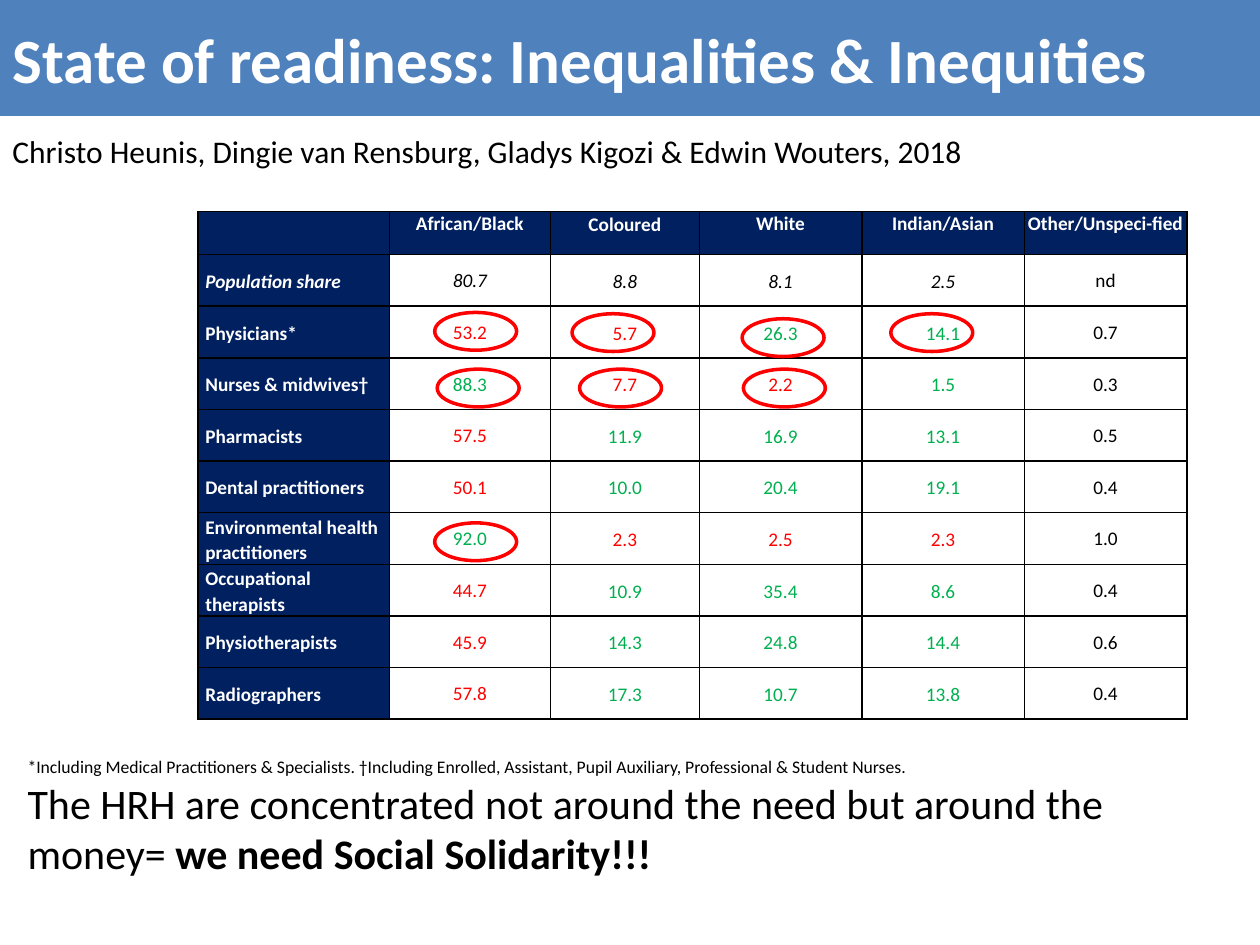
from lxml.etree import SubElement
from pptx import Presentation
from pptx.dml.color import RGBColor
from pptx.enum.shapes import MSO_SHAPE as SHAPE
from pptx.enum.text import MSO_ANCHOR as ANCHOR, PP_ALIGN as ALIGN
from pptx.oxml.ns import qn
from pptx.util import Inches, Pt

WHITE = RGBColor(0xFF, 0xFF, 0xFF)
BLACK = RGBColor(0, 0, 0)
NAVY = RGBColor(0x00, 0x20, 0x60)
BLUE = RGBColor(0x4F, 0x81, 0xBD)
RED = RGBColor(0xFF, 0, 0)
GREEN = RGBColor(0x00, 0xB0, 0x50)

HEADERS = ["", "African/Black", "Coloured", "White", "Indian/Asian", "Other/Unspeci-fied"]
ROWS = [
    ["Population share", "80.7", "8.8", "8.1", "2.5", "nd"],
    ["Physicians*", "53.2", "5.7", "26.3", "14.1", "0.7"],
    ["Nurses & midwives†", "88.3", "7.7", "2.2", "1.5", "0.3"],
    ["Pharmacists", "57.5", "11.9", "16.9", "13.1", "0.5"],
    ["Dental practitioners", "50.1", "10.0", "20.4", "19.1", "0.4"],
    ["Environmental health practitioners", "92.0", "2.3", "2.5", "2.3", "1.0"],
    ["Occupational therapists", "44.7", "10.9", "35.4", "8.6", "0.4"],
    ["Physiotherapists", "45.9", "14.3", "24.8", "14.4", "0.6"],
    ["Radiographers", "57.8", "17.3", "10.7", "13.8", "0.4"],
]
COLUMN_WIDTHS = [1.52, 1.28, 1.18, 1.29, 1.29, 1.29]
HEADER_HEIGHT, ROW_HEIGHT = 0.34, 0.41
ALWAYS_GREEN = {(3, 4)}  # below its population share, yet shown in green


def set_font(p, size, color, bold=False, italic=False):
    f = p.font
    f.name, f.size, f.bold, f.italic = "Calibri", Pt(size), bold, italic
    f.color.rgb = color


def add_borders(cell):
    tcPr = cell._tc.get_or_add_tcPr()
    for side in ("a:lnL", "a:lnR", "a:lnT", "a:lnB"):
        ln = SubElement(tcPr, qn(side), w=str(Pt(1)))
        SubElement(SubElement(ln, qn("a:solidFill")), qn("a:srgbClr"), val=str(BLACK))


prs = Presentation()
prs.slide_width, prs.slide_height = Inches(10), Inches(7.5)
s = prs.slides.add_slide(prs.slide_layouts[5])

# Title bar
title = s.shapes.title
title.left, title.top = 0, 0
title.width, title.height = prs.slide_width, Inches(0.92)
title.fill.solid()
title.fill.fore_color.rgb = BLUE
tf = title.text_frame
tf.text = "State of readiness: Inequalities & Inequities"
tf.vertical_anchor = ANCHOR.MIDDLE
tf.paragraphs[0].alignment = ALIGN.LEFT
set_font(tf.paragraphs[0], 36, WHITE, bold=True)

# Authors
tf = s.shapes.add_textbox(0, Inches(1), Inches(9.88), Inches(0.4)).text_frame
tf.word_wrap = True
tf.text = "Christo Heunis, Dingie van Rensburg, Gladys Kigozi & Edwin Wouters, 2018"
set_font(tf.paragraphs[0], 18, BLACK)

# Table: green at or above the population share, red below it
data = [HEADERS] + ROWS
table = s.shapes.add_table(len(data), len(HEADERS), Inches(1.57), Inches(1.68),
                           Inches(sum(COLUMN_WIDTHS)),
                           Inches(HEADER_HEIGHT + ROW_HEIGHT * len(ROWS))).table
table.first_row = table.horz_banding = False
for column, width in zip(table.columns, COLUMN_WIDTHS):
    column.width = Inches(width)
for r, texts in enumerate(data):
    table.rows[r].height = Inches(ROW_HEIGHT if r else HEADER_HEIGHT)
    for c, text in enumerate(texts):
        cell = table.cell(r, c)
        add_borders(cell)
        heading = r == 0 or c == 0
        if heading:
            cell.fill.solid()
            cell.fill.fore_color.rgb = NAVY
            color = WHITE
        else:
            cell.fill.background()
            if r == 1 or c == 5:
                color = BLACK
            elif (r, c) in ALWAYS_GREEN or float(text) >= float(ROWS[0][c]):
                color = GREEN
            else:
                color = RED
        padded = c == 2 or (r > 0 and c in (0, 3, 4))
        cell.margin_left = cell.margin_right = Inches(0.06 if padded else 0)
        cell.margin_top, cell.margin_bottom = Inches(0.01 if padded else 0), 0
        cell.vertical_anchor = ANCHOR.MIDDLE if r else ANCHOR.TOP
        cell.text = text
        p = cell.text_frame.paragraphs[0]
        p.alignment = ALIGN.CENTER if c else ALIGN.LEFT
        if r:
            p.line_spacing = 1.07
        if r == 0 or (c == 0 and r <= 3):
            p.space_after = Pt(6)
        set_font(p, 11, color, bold=heading, italic=r == 1 and c < 5)

# Rings around the striking values
for left, top in [(3.45, 2.48), (4.54, 2.49), (5.89, 2.53), (7.07, 2.49),
                  (3.47, 2.93), (4.6, 2.93), (5.9, 2.93), (3.45, 4.15)]:
    ring = s.shapes.add_shape(SHAPE.OVAL, Inches(left), Inches(top), Inches(0.65), Inches(0.3))
    ring.shadow.inherit = False
    ring.fill.background()
    ring.line.color.rgb = RED
    ring.line.width = Pt(2)

# Footnote and conclusion
tf = s.shapes.add_textbox(Inches(0.12), Inches(5.95), Inches(9.69), Inches(1.08)).text_frame
tf.word_wrap = True
p = tf.paragraphs[0]
p.text = ("*Including Medical Practitioners & Specialists. †Including Enrolled, Assistant, "
          "Pupil Auxiliary, Professional & Student Nurses.")
set_font(p, 10.1, BLACK)
p = tf.add_paragraph()
set_font(p, 24, BLACK)
p.add_run().text = "The HRH are concentrated not around the need but around the money= "
r = p.add_run()
r.text = "we need Social Solidarity!!!"
r.font.bold = True

prs.save("out.pptx")
